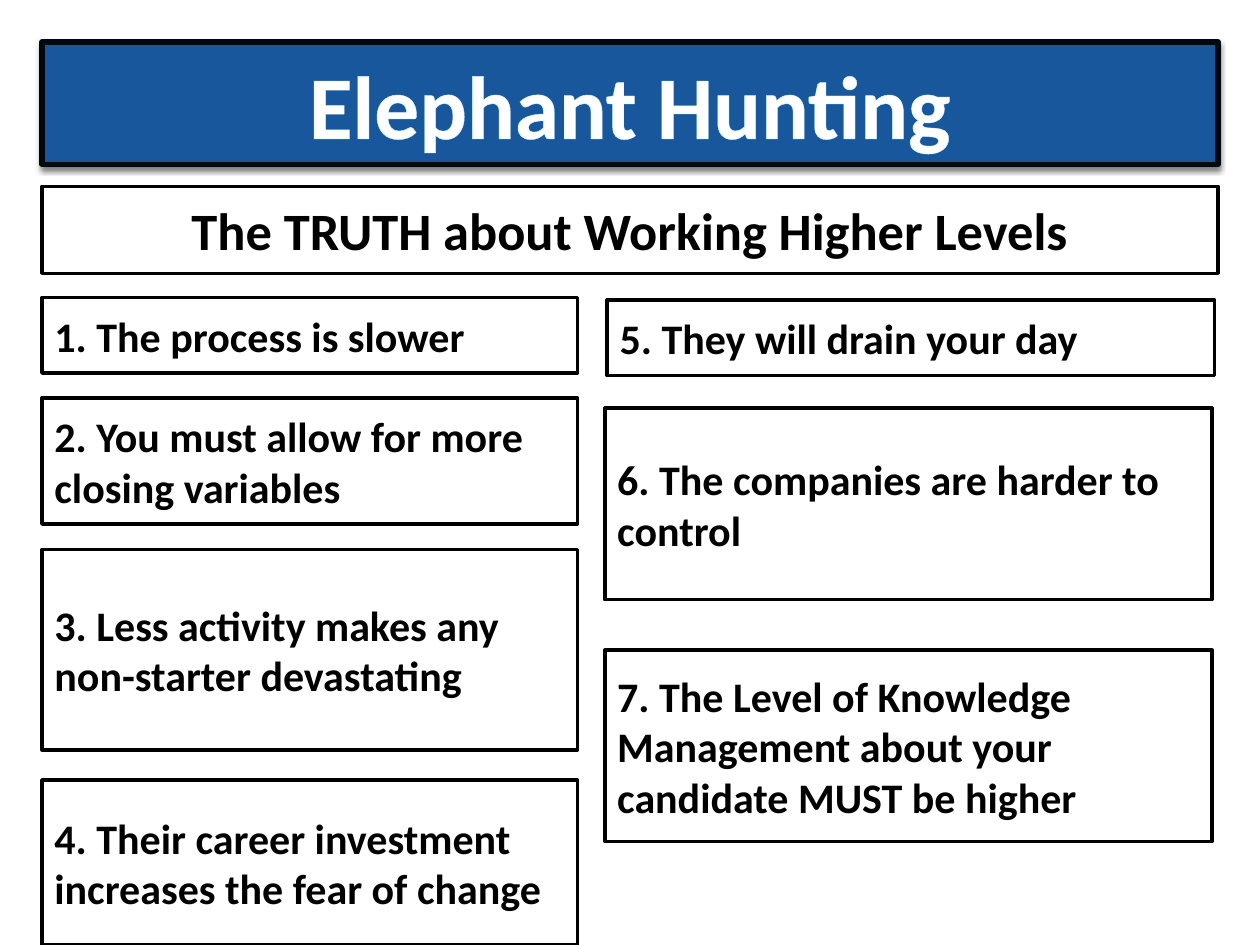
import dataclasses

import lxml.etree
import pptx
import pptx.dml.color
import pptx.enum.shapes
import pptx.enum.text
import pptx.oxml.ns
import pptx.util

Pt = pptx.util.Pt
Align = pptx.enum.text.PP_ALIGN
qn = pptx.oxml.ns.qn


@dataclasses.dataclass(frozen=True)
class Theme:
    font: str = "Calibri"
    blue: str = "18579B"
    navy: str = "02080F"
    ice: str = "CCF2FD"
    white: str = "FFFFFF"
    black: str = "000000"
    title: float = 51
    head: float = 30
    item: float = 24


THEME = Theme()
EDGE = 24
FULL = 672
LEFT = [
    (170, 43.2, "1. The process is slower"),
    (227.5, 72, "2. You must allow for more closing variables"),
    (314, 114.5, "3. Less activity makes any non-starter devastating"),
    (445.7, 94.3, "4. Their career investment increases the fear of change"),
]
RIGHT = [
    (347, 171.4, 43.2, "5. They will drain your day"),
    (345.6, 233.3, 109.4, "6. The companies are harder to control"),
    (345.6, 371.5, 109.4,
     "7. The Level of Knowledge Management about your candidate MUST be higher"),
]


def rgb(code):
    return pptx.dml.color.RGBColor.from_string(code)


def place(shape, left, top, width, height):
    shape.left, shape.top = Pt(left), Pt(top)
    shape.width, shape.height = Pt(width), Pt(height)


def paint(shape, fill, line, weight):
    shape.fill.solid()
    shape.fill.fore_color.rgb = rgb(fill)
    shape.line.color.rgb = rgb(line)
    shape.line.width = Pt(weight)
    shape.shadow.inherit = False


def write(shape, text, size, color, align):
    frame = shape.text_frame
    frame.text = text
    frame.word_wrap = True
    frame.auto_size = pptx.enum.text.MSO_AUTO_SIZE.NONE
    frame.vertical_anchor = pptx.enum.text.MSO_ANCHOR.MIDDLE
    para = frame.paragraphs[0]
    para.alignment = align
    font = para.runs[0].font
    font.name, font.size, font.bold = THEME.font, Pt(size), True
    font.color.rgb = rgb(color)


def shade(shape):
    effects = shape._element.spPr.find(qn("a:effectLst"))
    outer = lxml.etree.SubElement(
        effects, qn("a:outerShdw"), blurRad=str(Pt(3)), dist=str(Pt(2)),
        dir="5400000", rotWithShape="0")
    color = lxml.etree.SubElement(outer, qn("a:srgbClr"), val=THEME.black)
    lxml.etree.SubElement(color, qn("a:alpha"), val="50000")


def outline(run, color, weight):
    props = run._r.get_or_add_rPr()
    line = lxml.etree.SubElement(props, qn("a:ln"), w=str(Pt(weight)))
    fill = lxml.etree.SubElement(line, qn("a:solidFill"))
    lxml.etree.SubElement(fill, qn("a:srgbClr"), val=color)
    props.insert(0, line)


def banner(slide, text):
    title = slide.shapes.title
    place(title, EDGE, EDGE, FULL, 70)
    paint(title, THEME.blue, THEME.navy, 3)
    shade(title)
    write(title, text, THEME.title, THEME.white, Align.CENTER)
    outline(title.text_frame.paragraphs[0].runs[0], THEME.ice, 1)


def box(slide, left, top, width, height, text, size=THEME.item, align=Align.LEFT):
    shape = slide.shapes.add_shape(
        pptx.enum.shapes.MSO_SHAPE.RECTANGLE,
        Pt(left), Pt(top), Pt(width), Pt(height))
    paint(shape, THEME.white, THEME.black, 2)
    write(shape, text, size, THEME.black, align)


def main():
    deck = pptx.Presentation()
    deck.slide_width, deck.slide_height = Pt(720), Pt(540)
    slide = deck.slides.add_slide(deck.slide_layouts[5])
    banner(slide, "Elephant Hunting")
    box(slide, EDGE, 106.5, FULL, 49.7,
        "The TRUTH about Working Higher Levels", THEME.head, Align.CENTER)
    for top, height, text in LEFT:
        box(slide, EDGE, top, 306, height, text)
    for left, top, height, text in RIGHT:
        box(slide, left, top, 347, height, text)
    deck.save("out.pptx")


if __name__ == "__main__":
    main()
